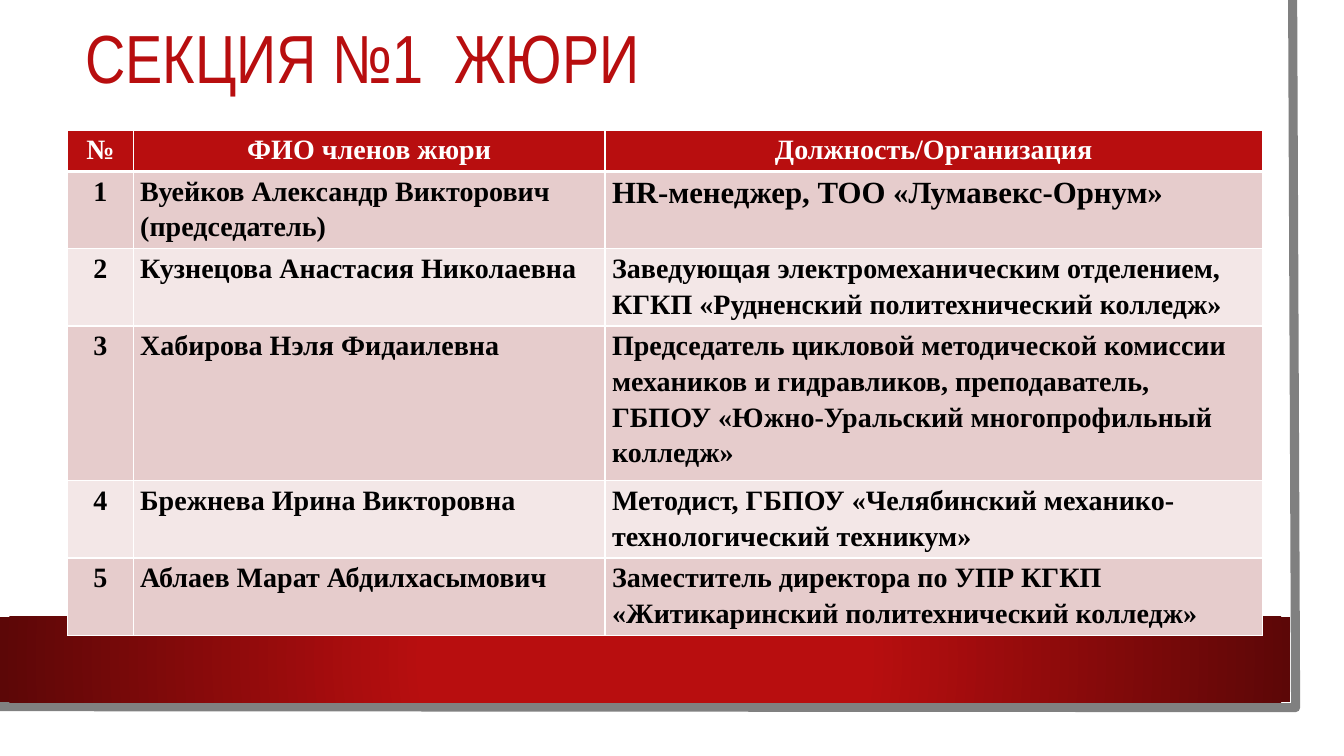
from lxml import etree
from pptx import Presentation
from pptx.dml.color import RGBColor
from pptx.enum.shapes import MSO_SHAPE
from pptx.enum.text import MSO_ANCHOR, PP_ALIGN
from pptx.oxml import parse_xml
from pptx.util import Inches, Pt

RECTANGLE = MSO_SHAPE.RECTANGLE
MIDDLE = MSO_ANCHOR.MIDDLE
LEFT, CENTER = PP_ALIGN.LEFT, PP_ALIGN.CENTER

SLIDE_W, SLIDE_H = Inches(13.33), Inches(7.5)
DRAWING_NS = "http://schemas.openxmlformats.org/drawingml/2006/main"
RED, DARK_RED, WHITE, BLACK, GRAY = "B80E0F", "5C0707", "FFFFFF", "000000", "808080"
ROW_TINTS = ("E6CCCC", "F3E7E7")
COLUMN_SHARES = (4.88, 35.11, 48.91)
HEADER_SHARE, LINE_SHARE = 5.47, 4.74
HEADINGS = ("№", "ФИО членов жюри", "Должность/Организация")
JURY = (
    ("Вуейков Александр Викторович (председатель)",
     "HR-менеджер, ТОО «Лумавекс-Орнум»", 2, 22),
    ("Кузнецова Анастасия Николаевна",
     "Заведующая электромеханическим отделением, "
     "КГКП «Рудненский политехнический колледж»", 2, 20),
    ("Хабирова Нэля Фидаилевна",
     "Председатель цикловой методической комиссии механиков и гидравликов, "
     "преподаватель, ГБПОУ «Южно-Уральский многопрофильный колледж»", 4, 20),
    ("Брежнева Ирина Викторовна",
     "Методист, ГБПОУ «Челябинский механико-технологический техникум»", 2, 20),
    ("Аблаев Марат Абдилхасымович",
     "Заместитель директора по УПР КГКП "
     "«Житикаринский политехнический колледж»", 2, 20),
)


def rgb(value):
    """Turn a hex string into a colour."""
    return RGBColor.from_string(value)


def across(share):
    """Length of a percentage of the slide's width."""
    return round(SLIDE_W * share / 100)


def down(share):
    """Length of a percentage of the slide's height."""
    return round(SLIDE_H * share / 100)


def area(left, top, width, height):
    """Convert percentages of the slide into a box."""
    return across(left), down(top), across(width), down(height)


def write(frame, text, size, font, color, bold=False, align=LEFT, spacing=1.0):
    """Set and format a single paragraph."""
    frame.text = text
    paragraph = frame.paragraphs[0]
    paragraph.alignment = align
    paragraph.line_spacing = spacing
    for run in paragraph.runs:
        run.font.size = Pt(size)
        run.font.name = font
        run.font.bold = bold
        run.font.color.rgb = rgb(color)


def add_panel(slide, box, fill):
    """Add a plain rectangle without outline."""
    panel = slide.shapes.add_shape(RECTANGLE, *box)
    panel.shadow.inherit = False
    panel.fill.solid()
    panel.fill.fore_color.rgb = rgb(fill)
    panel.line.fill.background()
    return panel


def add_band(slide, box):
    """Add the band that darkens away from its centre."""
    band = add_panel(slide, box, RED)
    solid = band.fill._xPr.find(f"{{{DRAWING_NS}}}solidFill")
    gradient = parse_xml(
        f'<a:gradFill xmlns:a="{DRAWING_NS}" rotWithShape="1"><a:gsLst>'
        f'<a:gs pos="34000"><a:srgbClr val="{RED}"/></a:gs>'
        f'<a:gs pos="100000"><a:srgbClr val="{DARK_RED}"/></a:gs></a:gsLst>'
        '<a:path path="circle"><a:fillToRect l="50000" t="50000" '
        'r="50000" b="50000"/></a:path></a:gradFill>')
    solid.getparent().replace(solid, gradient)


def add_edge(slide, corners, color, width):
    """Draw an open outline through the given corners."""
    points = [(across(x), down(y)) for x, y in corners]
    builder = slide.shapes.build_freeform(*points[0], scale=1.0)
    builder.add_line_segments(points[1:], close=False)
    edge = builder.convert_to_shape()
    edge.shadow.inherit = False
    edge.fill.background()
    edge.line.color.rgb = rgb(color)
    edge.line.width = Pt(width)


def add_title(slide, box, text):
    """Add the slide's heading."""
    frame = slide.shapes.add_textbox(*box).text_frame
    frame.word_wrap = True
    frame.vertical_anchor = MIDDLE
    write(frame, text, 48.6, "Arial Narrow", RED, spacing=0.9)


def set_borders(cell, bottom):
    """Give a cell white borders with its own bottom width."""
    properties = cell._tc.get_or_add_tcPr()
    widths = (("lnL", 1), ("lnR", 1), ("lnT", 1), ("lnB", bottom))
    for position, (side, width) in enumerate(widths):
        border = etree.Element(f"{{{DRAWING_NS}}}{side}", w=str(Pt(width)))
        fill = etree.SubElement(border, f"{{{DRAWING_NS}}}solidFill")
        etree.SubElement(fill, f"{{{DRAWING_NS}}}srgbClr", val=WHITE)
        properties.insert(position, border)


def fill_cell(cell, text, size, color, fill, align, bottom=1):
    """Write and style one table cell."""
    cell.margin_left = cell.margin_right = Inches(0.07)
    cell.margin_top = cell.margin_bottom = 0
    cell.fill.solid()
    cell.fill.fore_color.rgb = rgb(fill)
    set_borders(cell, bottom)
    write(cell.text_frame, text, size, "Times New Roman", color, True, align, 1.15)


def add_jury_table(slide, left, top):
    """Add the numbered list of jury members."""
    heights = [HEADER_SHARE] + [LINE_SHARE * lines for _, _, lines, _ in JURY]
    box = area(left, top, sum(COLUMN_SHARES), sum(heights))
    table = slide.shapes.add_table(len(heights), len(COLUMN_SHARES), *box).table
    for column, share in zip(table.columns, COLUMN_SHARES):
        column.width = across(share)
    for row, share in zip(table.rows, heights):
        row.height = down(share)
    for column, heading in enumerate(HEADINGS):
        fill_cell(table.cell(0, column), heading, 20, WHITE, RED, CENTER, 3)
    for number, (member, post, _, post_size) in enumerate(JURY, 1):
        tint = ROW_TINTS[(number - 1) % 2]
        entries = ((str(number), 20, CENTER), (member, 20, LEFT), (post, post_size, LEFT))
        for column, (text, size, align) in enumerate(entries):
            fill_cell(table.cell(number, column), text, size, BLACK, tint, align)


def main():
    """Build and save the jury slide."""
    deck = Presentation()
    deck.slide_width, deck.slide_height = SLIDE_W, SLIDE_H
    slide = deck.slides.add_slide(deck.slide_layouts[6])
    add_panel(slide, area(0, 0, 98.28, 96.93), WHITE)
    add_edge(slide, ((96.18, 0), (96.4, 93.6), (-0.23, 93.47)), GRAY, 6.5)
    add_band(slide, area(0, 81.6, 96.02, 11.33))
    add_title(slide, area(5.63, 3.47, 85.3, 9.2), "СЕКЦИЯ №1  ЖЮРИ")
    add_jury_table(slide, 5.03, 17.2)
    deck.save("out.pptx")


if __name__ == "__main__":
    main()
